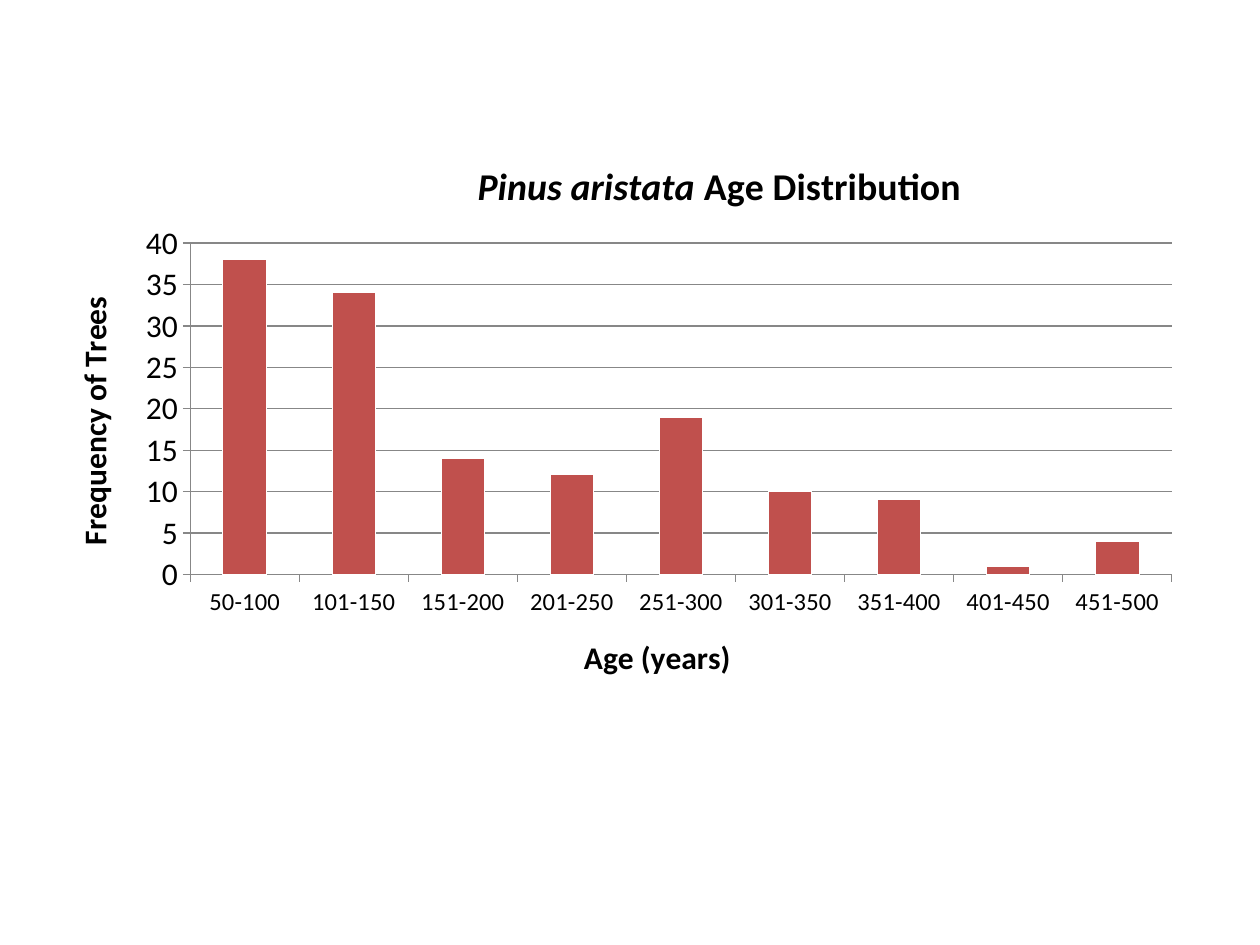
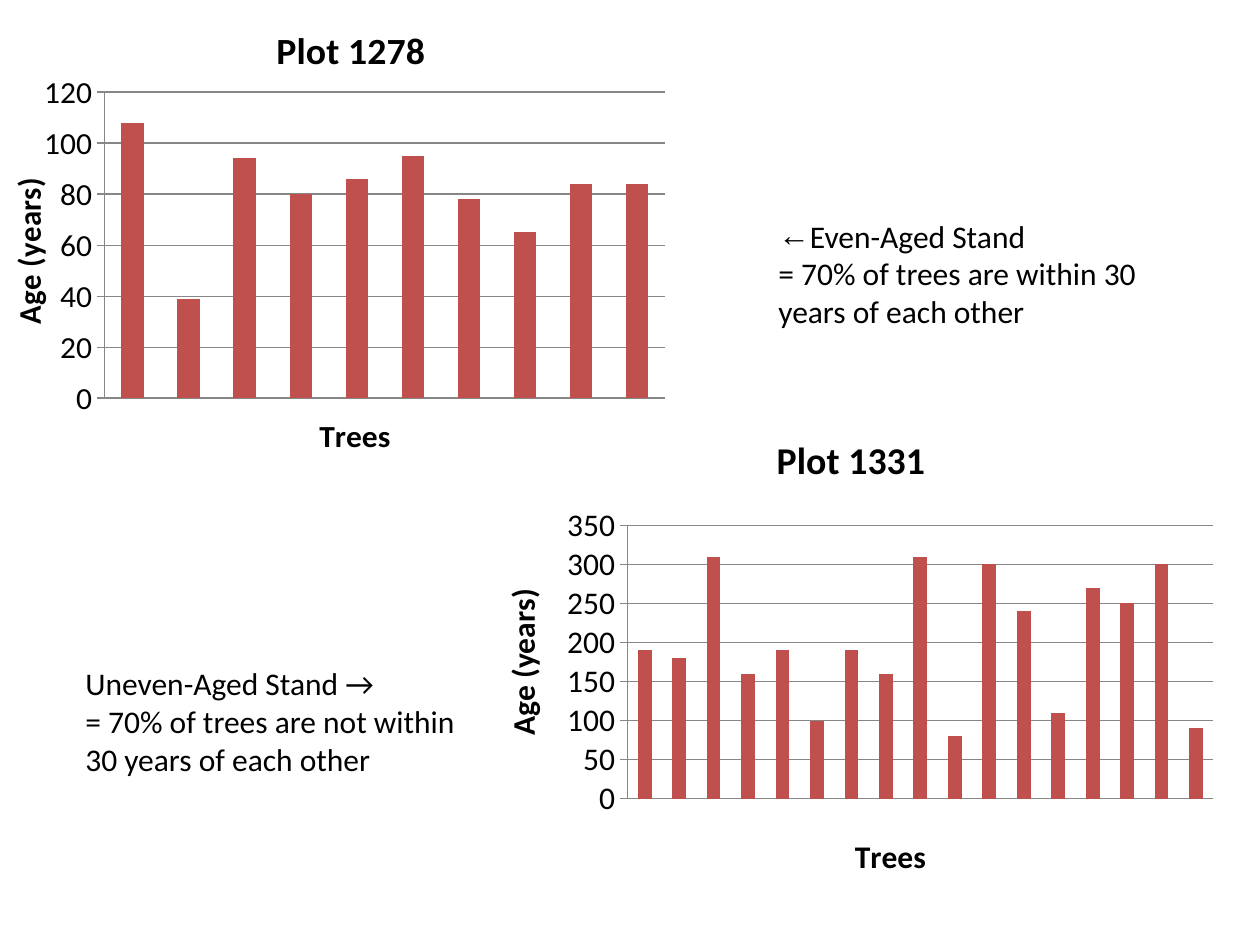
from lxml import etree
from pptx import Presentation
from pptx.chart.data import CategoryChartData
from pptx.dml.color import RGBColor
from pptx.enum.chart import XL_CHART_TYPE, XL_TICK_LABEL_POSITION, XL_TICK_MARK
from pptx.enum.text import MSO_AUTO_SIZE
from pptx.oxml import parse_xml
from pptx.oxml.ns import nsdecls, qn
from pptx.util import Inches, Pt

STACKED = XL_CHART_TYPE.COLUMN_STACKED
TICK_OUTSIDE, TICK_NONE = XL_TICK_MARK.OUTSIDE, XL_TICK_MARK.NONE
NO_LABELS = XL_TICK_LABEL_POSITION.NONE
GROW = MSO_AUTO_SIZE.SHAPE_TO_FIT_TEXT

FONT, BULLET_FONT = "Calibri", "Arial"
BLANK_LAYOUT = 6
COLORS = {name: RGBColor.from_string(value) for name, value in {
    "text": "000000", "bar": "C0504D", "grid": "878787", "edge": "FFFFFF"}.items()}


def place(element, spot, chart_size):
    """Pin a title (left, top) or plot area (left, top, width, height), in inches."""
    for old in element.findall(qn("c:layout")):
        element.remove(old)
    marks = '<c:layoutTarget val="inner"/>' if len(spot) == 4 else ""
    marks += '<c:xMode val="edge"/><c:yMode val="edge"/>'
    for tag, length, whole in zip("xywh", spot, chart_size * 2):
        marks += f'<c:{tag} val="{length / whole:.4f}"/>'
    layout = parse_xml(f'<c:layout {nsdecls("c")}><c:manualLayout>{marks}'
                       '</c:manualLayout></c:layout>')
    element.insert(0 if element.find(qn("c:tx")) is None else 1, layout)


def write_title(title, spans, size, spot, chart_size):
    """Fill a chart or axis title with (text, italic) spans at a fixed spot."""
    para = title.text_frame.paragraphs[0]
    para.font.name, para.font.size, para.font.bold = FONT, Pt(size), True
    para.font.color.rgb = COLORS["text"]
    for text, italic in spans:
        span = para.add_run()
        span.text = text
        span.font.italic = italic
    place(title._element, spot, chart_size)


deck = Presentation()
deck.slide_width, deck.slide_height = Inches(10), Inches(7.5)
pages = [deck.slides.add_slide(deck.slide_layouts[BLANK_LAYOUT]) for _ in range(2)]

charts = [
    {"page": 0, "box": (0.5, 1.25, 9, 4.95),
     "title": [("Pinus aristata", True), (" Age Distribution", False)],
     "x_title": "Age (years)", "y_title": "Frequency of Trees",
     "categories": ["50-100", "101-150", "151-200", "201-250", "251-300",
                    "301-350", "351-400", "401-450", "451-500"],
     "values": [38, 34, 14, 12, 19, 10, 9, 1, 4], "top": 40, "step": 5,
     "plot": (1.01, 0.68, 7.79, 2.63),
     "title_at": (3.26, 0), "x_at": (4.09, 3.75), "y_at": (0.03, 1.06)},
    {"page": 1, "box": (3.75, 3.25, 6, 3.94), "title": [("Plot 1331", False)],
     "x_title": "Trees", "y_title": "Age (years)", "categories": None,
     "values": [190, 180, 310, 160, 190, 100, 190, 160, 310, 80, 300, 240,
                110, 270, 250, 300, 90], "top": 350, "step": 50,
     "plot": (1.23, 0.92, 4.65, 2.17),
     "title_at": (2.36, 0.13), "x_at": (2.99, 3.33), "y_at": (0.18, 1.38)},
    {"page": 1, "box": (0, 0, 5.58, 3.69), "title": [("Plot 1278", False)],
     "x_title": "Trees", "y_title": "Age (years)", "categories": None,
     "values": [108, 39, 94, 80, 86, 95, 78, 65, 84, 84], "top": 120, "step": 20,
     "plot": (0.83, 0.75, 4.45, 2.49),
     "title_at": (2.14, 0.14), "x_at": (2.49, 3.33), "y_at": (0.01, 1.43)},
]

for item in charts:
    data = CategoryChartData()
    data.categories = item["categories"] or [
        str(tree) for tree in range(1, len(item["values"]) + 1)]
    data.add_series("Series 1", item["values"])
    chart = pages[item["page"]].shapes.add_chart(
        STACKED, *map(Inches, item["box"]), data).chart
    chart.has_legend = False
    chart.font.name, chart.font.size = FONT, Pt(18)
    chart.font.color.rgb = COLORS["text"]

    plot = chart.plots[0]
    plot.gap_width, plot.overlap, plot.vary_by_categories = 150, 100, False
    bars = plot.series[0].format
    bars.fill.solid()
    bars.fill.fore_color.rgb = COLORS["bar"]

    x_axis, y_axis = chart.category_axis, chart.value_axis
    y_axis.minimum_scale, y_axis.maximum_scale = 0, item["top"]
    y_axis.major_unit = item["step"]
    y_axis.has_major_gridlines = True
    y_axis.major_tick_mark = x_axis.major_tick_mark = TICK_OUTSIDE
    for line in (x_axis.format.line, y_axis.format.line,
                 y_axis.major_gridlines.format.line):
        line.color.rgb = COLORS["grid"]
        line.width = Pt(0.75)
    if item["categories"]:
        x_axis.tick_labels.font.size = Pt(14)
        bars.line.color.rgb = COLORS["edge"]
    else:
        x_axis.tick_label_position = NO_LABELS
        x_axis.major_tick_mark = TICK_NONE

    size = item["box"][2:]
    write_title(chart.chart_title, item["title"], 21.6, item["title_at"], size)
    write_title(x_axis.axis_title, [(item["x_title"], False)], 18, item["x_at"], size)
    write_title(y_axis.axis_title, [(item["y_title"], False)], 18, item["y_at"], size)
    body = y_axis.axis_title._element.find(".//" + qn("a:bodyPr"))
    body.set("rot", "-5400000")
    body.set("vert", "horz")
    place(chart._chartSpace.chart.plotArea, item["plot"], size)

stand_notes = [
    ((6.08, 1.67, 3.33, 1.01), "←",
     ["Even-Aged Stand", "= 70% of trees are within 30 years of each other"]),
    ((0.58, 5.22, 3.17, 1.01), None,
     ["Uneven-Aged Stand →", "= 70% of trees are not within 30 years of each other"]),
]
for position, bullet, lines in stand_notes:
    frame = pages[1].shapes.add_textbox(*map(Inches, position)).text_frame
    frame.word_wrap, frame.auto_size = True, GROW
    frame.text = "\n".join(lines)
    for para in frame.paragraphs:
        para.font.name, para.font.size = FONT, Pt(18)
        para.font.color.rgb = COLORS["text"]
    if bullet:
        properties = frame.paragraphs[0]._p.get_or_add_pPr()
        properties.insert(0, etree.Element(qn("a:buFont"), typeface=BULLET_FONT))
        properties.insert(1, etree.Element(qn("a:buChar"), char=bullet))

deck.save("out.pptx")
